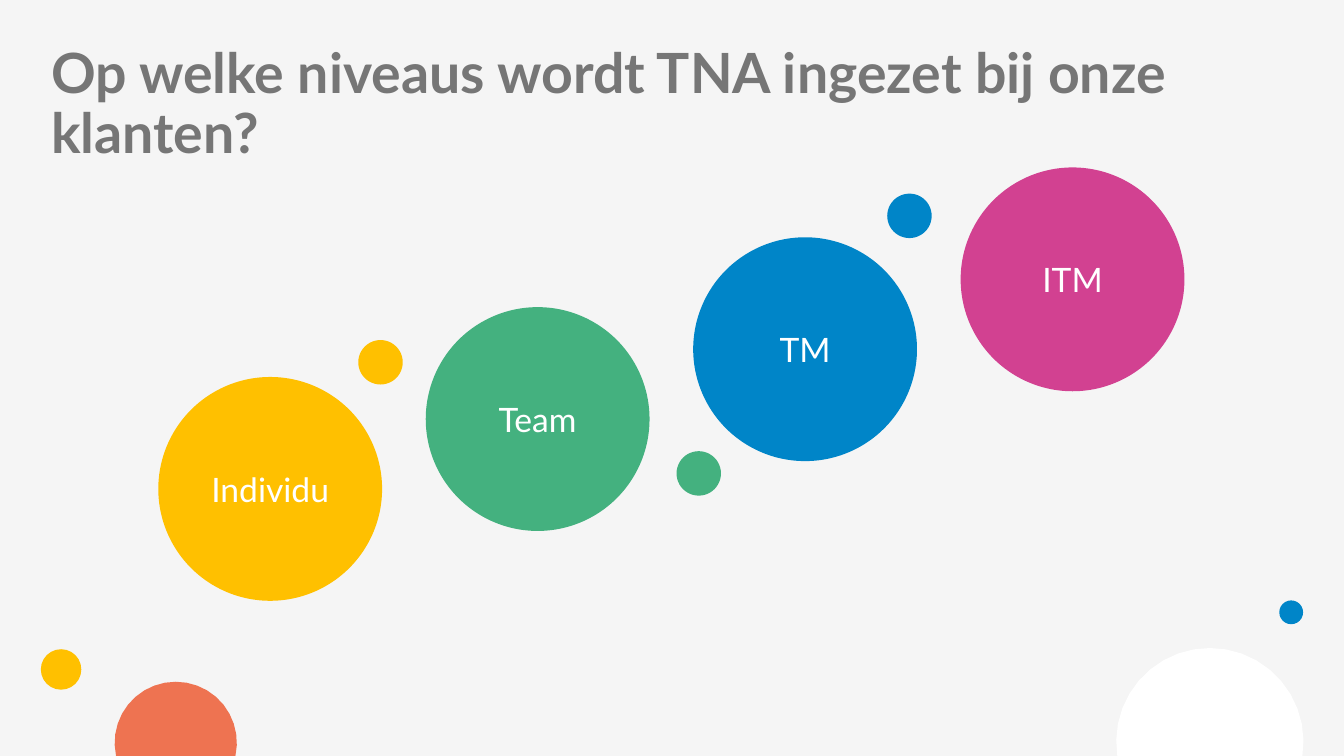
from math import asin, cos, pi, sin

from pptx import Presentation
from pptx.dml.color import RGBColor
from pptx.enum.shapes import MSO_SHAPE as Preset
from pptx.enum.text import MSO_ANCHOR as Anchor, PP_ALIGN as Align
from pptx.util import Cm, Pt

BACKGROUND = RGBColor(0xF5, 0xF5, 0xF5)
GREY = RGBColor(0x76, 0x76, 0x76)
WHITE = RGBColor(0xFF, 0xFF, 0xFF)
YELLOW = RGBColor(0xFF, 0xC0, 0x00)
GREEN = RGBColor(0x44, 0xB1, 0x7F)
BLUE = RGBColor(0x00, 0x85, 0xC8)
PINK = RGBColor(0xD2, 0x41, 0x91)
ORANGE = RGBColor(0xEE, 0x73, 0x51)

FONT = "Lato"
PAGE_WIDTH, PAGE_HEIGHT = 33.87, 19.05
LEVELS = [("Individu", YELLOW), ("Team", GREEN), ("TM", BLUE), ("ITM", PINK)]
LEVEL_SIZE, LEVEL_LEFT, LEVEL_TOP = 5.64, 3.99, 9.5
STEP_RIGHT, STEP_UP = 6.74, 1.76
CORNER_DOTS = [(1.03, 16.36, 1.02, YELLOW), (32.24, 15.13, 0.6, BLUE)]
LEVEL_DOTS = [
    (9.03, 8.57, 1.12, YELLOW),
    (17.05, 11.37, 1.12, GREEN),
    (22.36, 4.88, 1.12, BLUE),
]
ARC_STEPS = 20


def paint(shape, color):
    """Give a shape a plain fill without line or shadow."""
    shape.shadow.inherit = False
    shape.fill.solid()
    shape.fill.fore_color.rgb = color
    shape.line.fill.background()


def style_text(para, size, color, bold=False):
    """Set the font of every run in a paragraph."""
    for span in para.runs:
        span.font.name = FONT
        span.font.size = Pt(size)
        span.font.bold = bold
        span.font.color.rgb = color


def add_circle(page, left, top, size, color):
    """Add a filled circle."""
    circle = page.shapes.add_shape(Preset.OVAL, Cm(left), Cm(top), Cm(size), Cm(size))
    paint(circle, color)
    return circle


def add_level(page, left, top, label, color):
    """Add a large circle with a centred label."""
    frame = add_circle(page, left, top, LEVEL_SIZE, color).text_frame
    frame.text = label
    frame.word_wrap = True
    frame.vertical_anchor = Anchor.MIDDLE
    frame.paragraphs[0].alignment = Align.CENTER
    style_text(frame.paragraphs[0], 24, WHITE)


def add_cut_circle(page, center_x, center_y, radius, color):
    """Add a circle cut off along the bottom edge of the page."""
    cut = asin((PAGE_HEIGHT - center_y) / radius)
    angles = [cut - (pi + 2 * cut) * step / ARC_STEPS for step in range(ARC_STEPS + 1)]
    points = [
        (Cm(center_x + radius * cos(angle)), Cm(center_y + radius * sin(angle)))
        for angle in angles
    ]
    builder = page.shapes.build_freeform(*points[0])
    builder.add_line_segments(points[1:], close=True)
    paint(builder.convert_to_shape(), color)


def add_title(page, text):
    """Add the bold heading."""
    box = page.shapes.add_textbox(Cm(1.04), Cm(1.02), Cm(31.8), Cm(1.75))
    frame = box.text_frame
    frame.word_wrap = True
    frame.text = text
    para = frame.paragraphs[0]
    para.line_spacing = 0.9
    style_text(para, 39.6, GREY, bold=True)


def main():
    """Build the slide and save it."""
    deck = Presentation()
    deck.slide_width, deck.slide_height = Cm(PAGE_WIDTH), Cm(PAGE_HEIGHT)
    page = deck.slides.add_slide(deck.slide_layouts[6])
    page.background.fill.solid()
    page.background.fill.fore_color.rgb = BACKGROUND

    add_cut_circle(page, 30.49, 18.69, 2.36, WHITE)
    for dot in CORNER_DOTS:
        add_circle(page, *dot)
    add_cut_circle(page, 4.43, 18.72, 1.54, ORANGE)
    add_title(page, "Op welke niveaus wordt TNA ingezet bij onze klanten?")
    for index, (label, color) in enumerate(LEVELS):
        left = LEVEL_LEFT + index * STEP_RIGHT
        top = LEVEL_TOP - index * STEP_UP
        add_level(page, left, top, label, color)
    for dot in LEVEL_DOTS:
        add_circle(page, *dot)

    deck.save("out.pptx")


if __name__ == "__main__":
    main()
